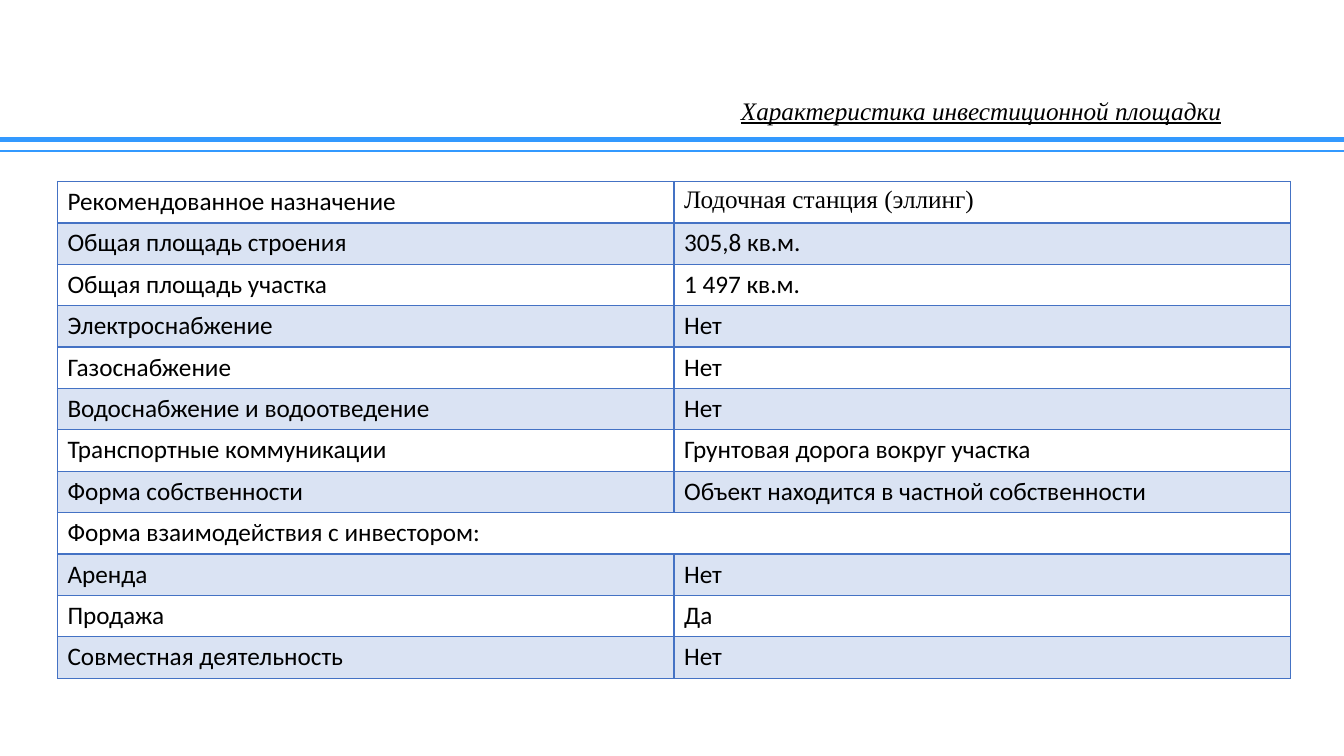
from dataclasses import dataclass

from lxml import etree
from pptx import Presentation
from pptx.dml.color import RGBColor
from pptx.enum.shapes import MSO_CONNECTOR as Connector
from pptx.enum.text import MSO_ANCHOR as Anchor, PP_ALIGN as Align
from pptx.oxml.ns import qn
from pptx.util import Inches, Pt


@dataclass(frozen=True)
class Theme:
    text: str = "000000"
    rule: str = "3399FF"
    border: str = "4472C4"
    band: str = "DAE3F3"
    size: int = 18
    body_font: str = "Calibri"
    accent_font: str = "Times New Roman"


THEME = Theme()
WIDTH, HEIGHT = 13.33, 7.5
TITLE = "Характеристика инвестиционной площадки"
FEATURES = [
    ("Рекомендованное назначение", "Лодочная станция (эллинг)"),
    ("Общая площадь строения", "305,8 кв.м."),
    ("Общая площадь участка", "1 497 кв.м."),
    ("Электроснабжение", "Нет"),
    ("Газоснабжение", "Нет"),
    ("Водоснабжение и водоотведение", "Нет"),
    ("Транспортные коммуникации", "Грунтовая дорога вокруг участка"),
    ("Форма собственности", "Объект находится в частной собственности"),
    ("Форма взаимодействия с инвестором:",),
    ("Аренда", "Нет"),
    ("Продажа", "Да"),
    ("Совместная деятельность", "Нет"),
]


def style_font(font, name):
    font.name = name
    font.size = Pt(THEME.size)
    font.color.rgb = RGBColor.from_string(THEME.text)


def add_title(slide, left, top, width, height):
    box = slide.shapes.add_textbox(*map(Inches, (left, top, width, height)))
    frame = box.text_frame
    frame.word_wrap = True
    frame.vertical_anchor = Anchor.MIDDLE
    frame.text = TITLE
    paragraph = frame.paragraphs[0]
    paragraph.alignment = Align.CENTER
    paragraph.line_spacing = 0.9
    font = paragraph.runs[0].font
    style_font(font, THEME.accent_font)
    font.italic = True
    font.underline = True


def add_rules(slide, left, top, width, height):
    """Thick rule on the top edge of the box, thin one on its bottom edge."""
    for y, weight in ((top, 3.5), (top + height, 1.5)):
        rule = slide.shapes.add_connector(
            Connector.STRAIGHT, *map(Inches, (left, y, left + width, y)))
        rule.line.color.rgb = RGBColor.from_string(THEME.rule)
        rule.line.width = Pt(weight)
        etree.SubElement(rule._element.spPr, qn("a:effectLst"))


def set_borders(cell, top_weight, bottom_weight):
    properties = cell._tc.get_or_add_tcPr()
    weights = {"L": 1, "R": 1, "T": top_weight, "B": bottom_weight}
    for side, weight in weights.items():
        line = etree.SubElement(properties, qn(f"a:ln{side}"), w=str(Pt(weight)))
        fill = etree.SubElement(line, qn("a:solidFill"))
        etree.SubElement(fill, qn("a:srgbClr"), val=THEME.border)


def add_features(slide, left, top, width, height):
    rows, columns = len(FEATURES), 2
    table = slide.shapes.add_table(
        rows, columns, *map(Inches, (left, top, width, height))).table
    table.first_row = False
    table.horz_banding = False
    for column in table.columns:
        column.width = Inches(width / columns)
    for index, texts in enumerate(FEATURES):
        table.rows[index].height = Inches(height / rows)
        # A lone label spans the whole row
        if len(texts) == 1:
            table.cell(index, 0).merge(table.cell(index, columns - 1))
        for column in range(columns):
            cell = table.cell(index, column)
            set_borders(cell, 2 if index == 1 else 1, 2 if index == 0 else 1)
            if index % 2:
                cell.fill.solid()
                cell.fill.fore_color.rgb = RGBColor.from_string(THEME.band)
            else:
                cell.fill.background()
        for column, text in enumerate(texts):
            frame = table.cell(index, column).text_frame
            frame.text = text
            accented = (index, column) == (0, 1)
            style_font(frame.paragraphs[0].runs[0].font,
                       THEME.accent_font if accented else THEME.body_font)


def main():
    presentation = Presentation()
    presentation.slide_width = Inches(WIDTH)
    presentation.slide_height = Inches(HEIGHT)
    slide = presentation.slides.add_slide(presentation.slide_layouts[6])
    add_rules(slide, 0, HEIGHT * 0.184, WIDTH, HEIGHT * 0.016)
    add_title(slide, WIDTH * 0.5, HEIGHT * 0.13, WIDTH * 0.46, HEIGHT * 0.036)
    add_features(slide, 0.57, HEIGHT * 0.24, 12.23, 4.93)
    presentation.save("out.pptx")


if __name__ == "__main__":
    main()
